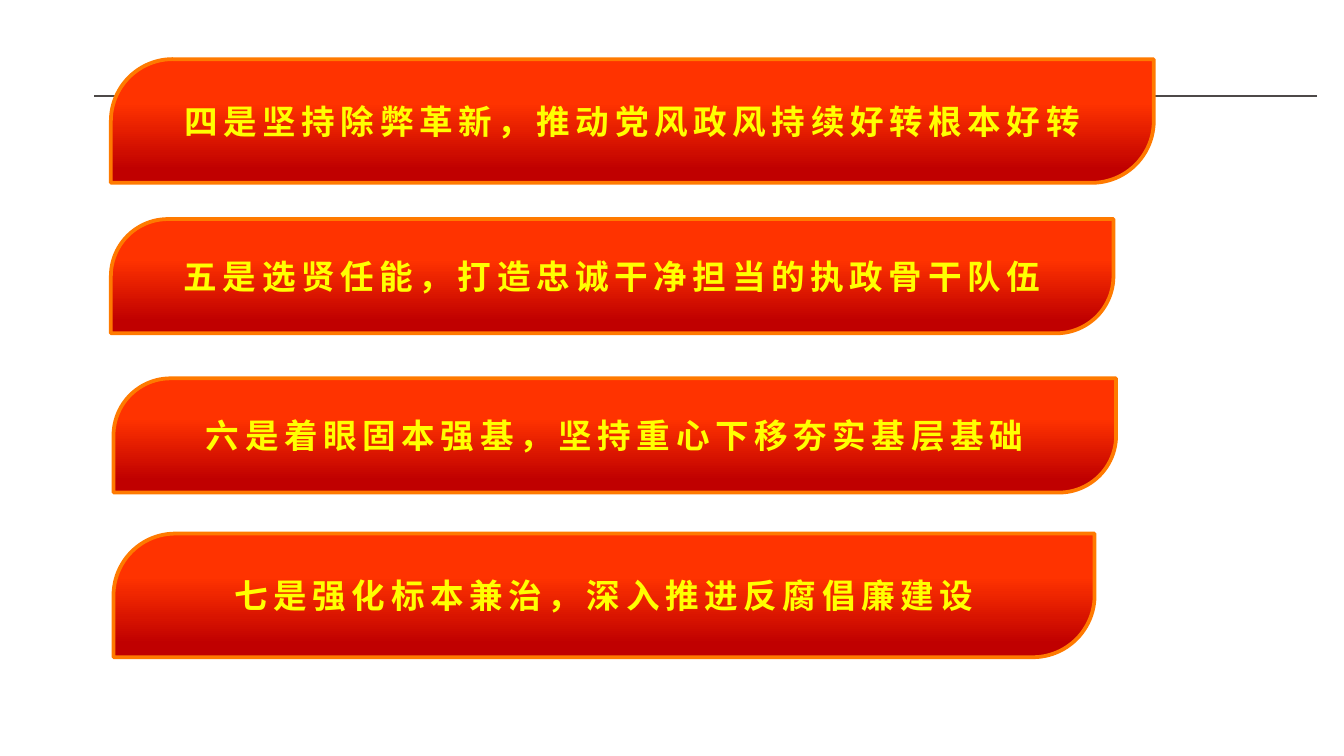
from dataclasses import dataclass

from lxml import etree
from pptx import Presentation
from pptx.dml.color import RGBColor
from pptx.enum.shapes import MSO_CONNECTOR, MSO_SHAPE
from pptx.enum.text import MSO_ANCHOR, PP_ALIGN
from pptx.oxml.ns import qn
from pptx.shapes.autoshape import Shape
from pptx.slide import Slide
from pptx.util import Emu, Pt

EMU_PER_PX = 4572
BANNER_SHAPE = MSO_SHAPE.ROUND_2_DIAG_RECTANGLE
STRAIGHT = MSO_CONNECTOR.STRAIGHT
CENTER = PP_ALIGN.CENTER
MIDDLE = MSO_ANCHOR.MIDDLE

RULE_GRAY = RGBColor(0x4D, 0x49, 0x48)
BRIGHT_RED = RGBColor(0xFF, 0x33, 0x00)
DARK_RED = RGBColor(0xC0, 0x00, 0x00)
ORANGE = RGBColor(0xFF, 0x7A, 0x00)
YELLOW = RGBColor(0xFF, 0xFF, 0x00)
GRADIENT = ((0.35, BRIGHT_RED), (0.89, DARK_RED))


@dataclass(frozen=True)
class Banner:
    left: int
    top: int
    width: int
    height: int
    text: str


BANNERS = (
    Banner(169, 563, 1492, 170, "六是着眼固本强基，坚持重心下移夯实基层基础"),
    Banner(169, 794, 1460, 184, "七是强化标本兼治，深入推进反腐倡廉建设"),
    Banner(165, 88, 1552, 184, "四是坚持除弊革新，推动党风政风持续好转根本好转"),
    Banner(165, 326, 1492, 170, "五是选贤任能，打造忠诚干净担当的执政骨干队伍"),
)


def px(length: int) -> Emu:
    return Emu(length * EMU_PER_PX)


def write_text(shape: Shape, text: str, *, size: int, color: RGBColor,
               font: str = "Arial", bold: bool = False, spacing: int = 0) -> None:
    frame = shape.text_frame
    frame.word_wrap = True
    frame.vertical_anchor = MIDDLE
    paragraph = frame.paragraphs[0]
    paragraph.alignment = CENTER
    run = paragraph.add_run()
    run.text = text
    run.font.name = font
    run.font.size = Pt(size)
    run.font.bold = bold
    run.font.color.rgb = color
    run.font._element.set("spc", str(spacing * 100))


def draw_rule(slide: Slide, start: int, end: int, y: int) -> None:
    rule = slide.shapes.add_connector(STRAIGHT, px(start), px(y), px(end), px(y))
    rule.line.color.rgb = RULE_GRAY
    rule.line.width = Pt(0.75)
    etree.SubElement(rule._element.spPr, qn("a:effectLst"))


def draw_banner(slide: Slide, banner: Banner) -> None:
    shape = slide.shapes.add_shape(BANNER_SHAPE, px(banner.left), px(banner.top),
                                   px(banner.width), px(banner.height))
    shape.shadow.inherit = False
    shape.adjustments[0] = 0.5
    shape.adjustments[1] = 0
    shape.fill.gradient()
    shape.fill.gradient_angle = 270
    for stop, (position, color) in zip(shape.fill.gradient_stops, GRADIENT):
        stop.position = position
        stop.color.rgb = color
    shape.line.color.rgb = ORANGE
    shape.line.width = Pt(2)
    write_text(shape, banner.text, size=18, color=YELLOW, bold=True, spacing=3)


def main() -> None:
    presentation = Presentation()
    presentation.slide_width = px(2000)
    presentation.slide_height = px(1125)
    slide = presentation.slides.add_slide(presentation.slide_layouts[6])
    draw_rule(slide, 1960, 140, 143)
    for banner in BANNERS:
        draw_banner(slide, banner)
    presentation.save("out.pptx")


if __name__ == "__main__":
    main()
